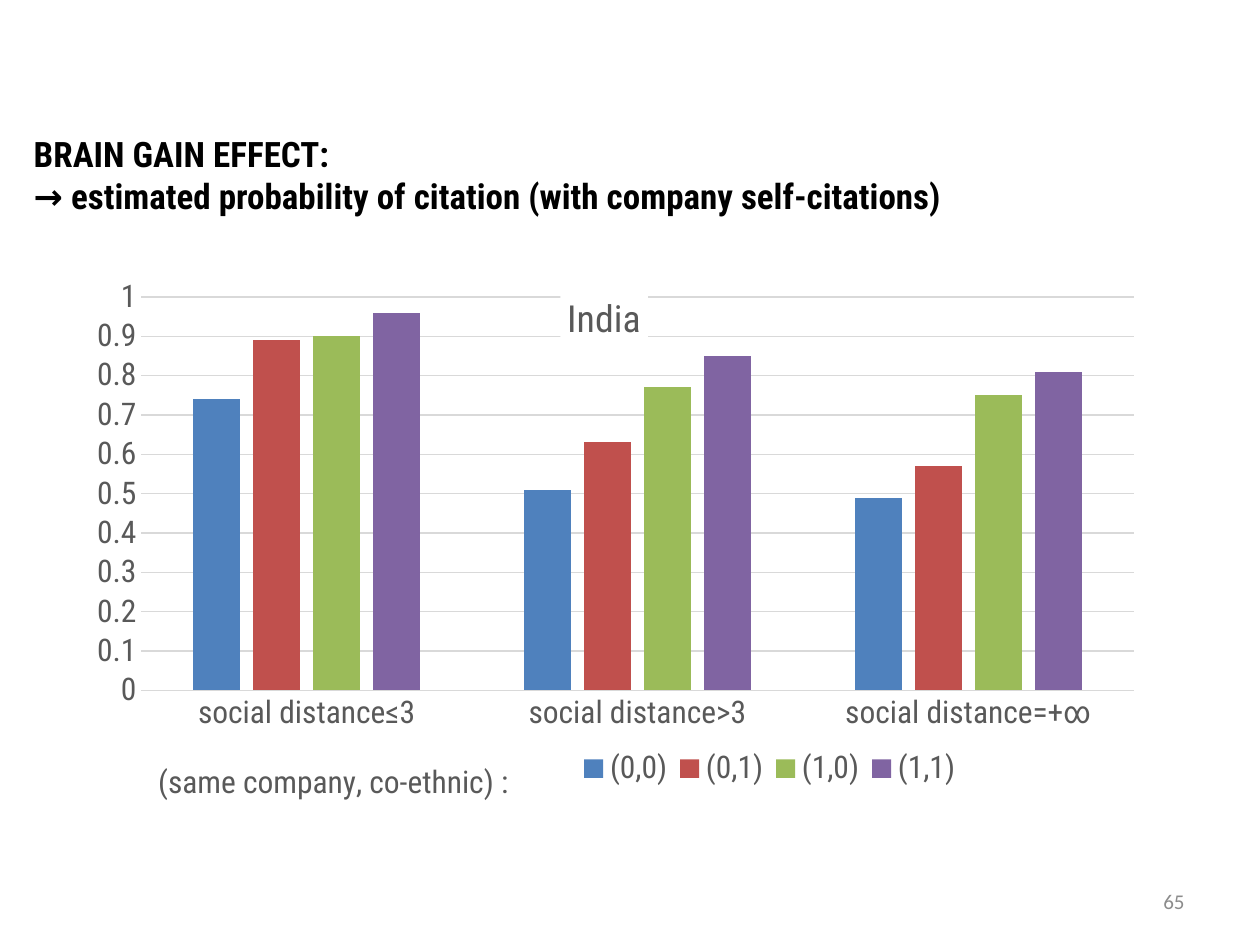
from lxml.etree import SubElement
from pptx import Presentation
from pptx.chart.data import CategoryChartData
from pptx.dml.color import RGBColor
from pptx.enum.chart import XL_CHART_TYPE, XL_LEGEND_POSITION, XL_TICK_MARK
from pptx.enum.text import MSO_ANCHOR, PP_ALIGN
from pptx.oxml.ns import qn
from pptx.util import Pt

HEADING = [
    "BRAIN GAIN EFFECT: ",
    "→ estimated probability of citation (with company self-citations)",
]
PAGE_NUMBER = "65"
COUNTRY = "India"
LEGEND_CAPTION = "(same company, co-ethnic) :"
DISTANCES = ["social distance≤3", "social distance>3", "social distance=+∞"]
PROBABILITIES = {
    "(0,0)": (0.74, 0.51, 0.49),
    "(0,1)": (0.89, 0.63, 0.57),
    "(1,0)": (0.9, 0.77, 0.75),
    "(1,1)": (0.96, 0.85, 0.81),
}
COLORS = {
    "(0,0)": "4F81BD",
    "(0,1)": "C0504D",
    "(1,0)": "9BBB59",
    "(1,1)": "8064A2",
    "heading": "000000",
    "label": "595959",
    "grid": "D9D9D9",
    "page": "8C8C8C",
    "paper": "FFFFFF",
}
FONT = "Roboto Condensed"
HANGING = Pt(21)


def color(key):
    return RGBColor.from_string(COLORS[key])


def style(font, size, key, name=FONT, bold=False):
    font.size, font.name, font.bold = Pt(size), name, bold
    font.color.rgb = color(key)


def add_text_box(slide, box, lines, align, **look):
    frame = slide.shapes.add_textbox(*map(Pt, box)).text_frame
    frame.word_wrap = True
    for i, line in enumerate(lines):
        paragraph = frame.add_paragraph() if i else frame.paragraphs[0]
        paragraph.alignment = align
        run = paragraph.add_run()
        run.text = line
        style(run.font, **look)
    return frame


def place(parent, before, x, y, w=None, h=None, inner=False):
    for old in parent.findall(qn("c:layout")):
        parent.remove(old)
    layout = SubElement(parent, qn("c:layout"))
    before.addprevious(layout)
    manual = SubElement(layout, qn("c:manualLayout"))
    settings = [("layoutTarget", "inner")] if inner else []
    settings += [("xMode", "edge"), ("yMode", "edge"), ("x", x), ("y", y)]
    settings += [("w", w), ("h", h)] if w else []
    for tag, value in settings:
        SubElement(manual, qn("c:" + tag)).set("val", str(value))


def write_title(title, text, size, x, y):
    run = title.text_frame.paragraphs[0].add_run()
    run.text = text
    style(run.font, size, "label")
    element = title._element
    place(element, element.find(qn("c:overlay")), x, y)


def add_probability_chart(slide):
    data = CategoryChartData()
    data.categories = DISTANCES
    for name, values in PROBABILITIES.items():
        data.add_series(name, values)
    chart = slide.shapes.add_chart(
        XL_CHART_TYPE.COLUMN_CLUSTERED, Pt(36.7), Pt(151.2), Pt(630), Pt(311.8), data
    ).chart
    style(chart.font, 18, "label")

    plot = chart.plots[0]
    plot.gap_width, plot.overlap, plot.vary_by_categories = 219, -27, False
    for series in plot.series:
        series.format.fill.solid()
        series.format.fill.fore_color.rgb = color(series.name)

    distance, probability = chart.category_axis, chart.value_axis
    for axis in (distance, probability):
        axis.major_tick_mark = axis.minor_tick_mark = XL_TICK_MARK.NONE
        style(axis.tick_labels.font, 18, "label")
    probability.minimum_scale, probability.maximum_scale = 0, 1
    probability.major_unit = 0.1
    probability.format.line.fill.background()
    for line in (distance.format.line, probability.major_gridlines.format.line):
        line.color.rgb = color("grid")
        line.width = Pt(0.75)

    chart.has_title = True
    write_title(chart.chart_title, COUNTRY, 21.6, 0.45, 0.04)
    chart.chart_title.format.fill.solid()
    chart.chart_title.format.fill.fore_color.rgb = color("paper")
    write_title(distance.axis_title, LEGEND_CAPTION, 18, 0.08, 0.91)

    chart.has_legend = True
    legend = chart.legend
    legend.position = XL_LEGEND_POSITION.BOTTOM
    legend.include_in_layout = False
    style(legend.font, 18, "label")
    legend_element = legend._element
    place(legend_element, legend_element.find(qn("c:overlay")), 0.46, 0.89, 0.36, 0.09)

    bars = plot._element
    place(bars.getparent(), bars, 0.07, 0.06, 0.9, 0.73, inner=True)


def main():
    deck = Presentation()
    deck.slide_width, deck.slide_height = Pt(720), Pt(540)
    slide = deck.slides.add_slide(deck.slide_layouts[6])
    page = add_text_box(slide, (516, 500.5, 168, 28.8), [PAGE_NUMBER],
                        PP_ALIGN.RIGHT, size=12, key="page", name="Calibri")
    page.vertical_anchor = MSO_ANCHOR.MIDDLE
    heading = add_text_box(slide, (12.2, 72, 702, 55.4), HEADING,
                           PP_ALIGN.JUSTIFY, size=20, key="heading", bold=True)
    for paragraph in heading.paragraphs:
        properties = paragraph._p.get_or_add_pPr()
        properties.set("marL", str(HANGING))
        properties.set("indent", str(-HANGING))
    add_probability_chart(slide)
    deck.save("out.pptx")


if __name__ == "__main__":
    main()
